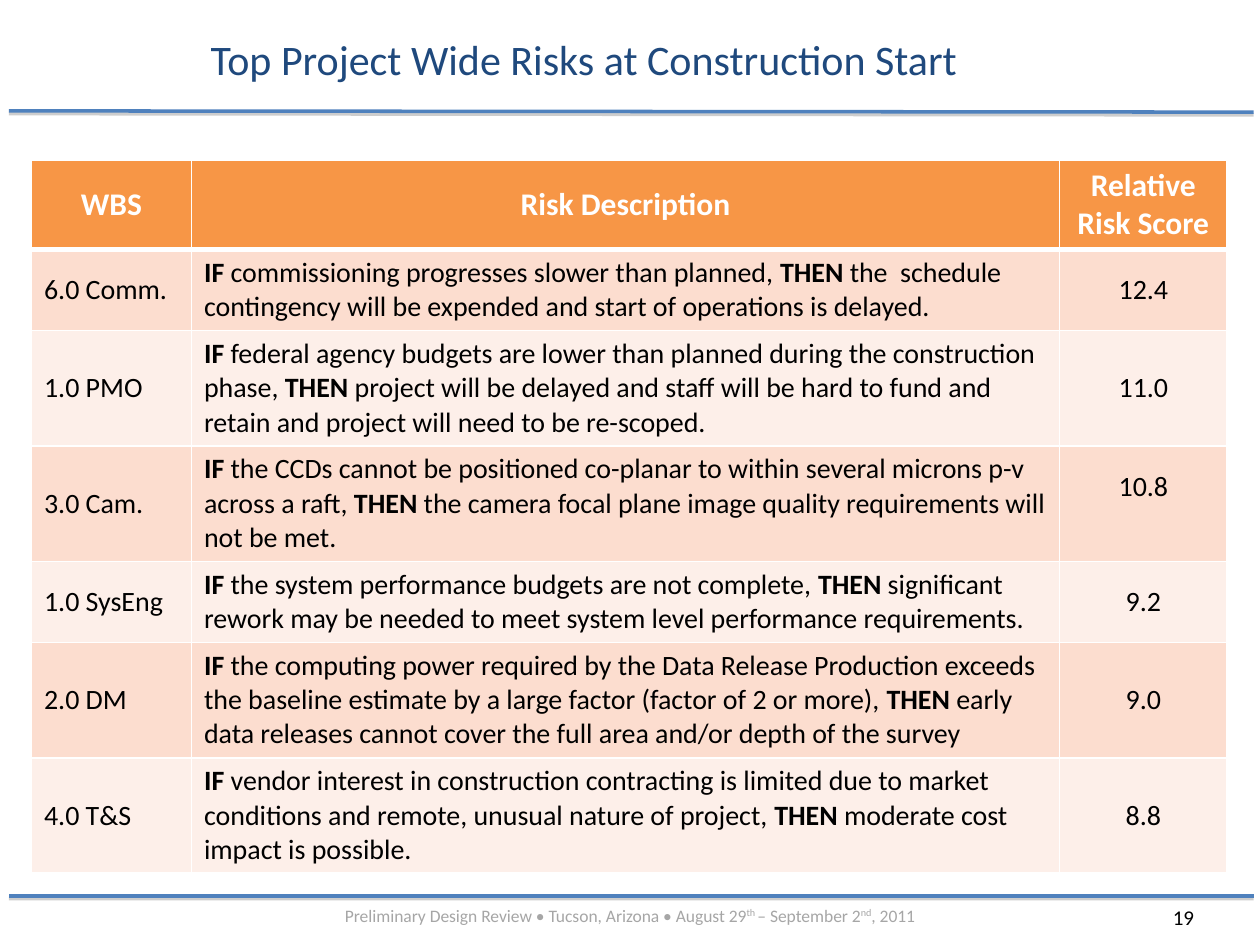
"""Build the slide listing the top project-wide risks at construction start."""
from lxml.etree import SubElement
from pptx import Presentation
from pptx.dml.color import RGBColor
from pptx.enum.shapes import MSO_CONNECTOR
from pptx.enum.text import MSO_ANCHOR as Anchor, MSO_AUTO_SIZE as AutoSize, PP_ALIGN as Align
from pptx.oxml import parse_xml
from pptx.oxml.ns import nsdecls, qn
from pptx.util import Inches, Pt

NAVY = RGBColor(0x1F, 0x49, 0x7D)
BLUE = RGBColor(0x4F, 0x81, 0xBD)
ORANGE = RGBColor(0xF7, 0x96, 0x46)
PEACH = RGBColor(0xFC, 0xDD, 0xCF)
PALE_PEACH = RGBColor(0xFD, 0xEF, 0xE9)
GRAY = RGBColor(0xA6, 0xA6, 0xA6)
BLACK = RGBColor(0, 0, 0)
WHITE = RGBColor(0xFF, 0xFF, 0xFF)

RULE_SHADOW = (
    f'<a:effectLst {nsdecls("a")}><a:outerShdw blurRad="0" dist="20320" dir="5400000" rotWithShape="0">'
    '<a:srgbClr val="808080"><a:alpha val="38000"/></a:srgbClr></a:outerShdw></a:effectLst>'
)
HEADINGS = ["WBS", "Risk Description", "Relative Risk Score"]
RISKS = [
    ("6.0 Comm.", "commissioning progresses slower than planned,",
     "the  schedule contingency will be expended and start of operations is delayed.", "12.4"),
    ("1.0 PMO", "federal agency budgets are lower than planned during the construction phase,",
     "project will be delayed and staff will be hard to fund and retain and project will need to be re-scoped.",
     "11.0"),
    ("3.0 Cam.", "the CCDs cannot be positioned co-planar to within several microns p-v across a raft,",
     "the camera focal plane image quality requirements will not be met.", "10.8"),
    ("1.0 SysEng", "the system performance budgets are not complete,",
     "significant rework may be needed to meet system level performance requirements.", "9.2"),
    ("2.0 DM", "the computing power required by the Data Release Production exceeds the baseline estimate "
     "by a large factor (factor of 2 or more),",
     "early data releases cannot cover the full area and/or depth of the survey", "9.0"),
    ("4.0 T&S", "vendor interest in construction contracting is limited due to market conditions and remote, "
     "unusual nature of project,",
     "moderate cost impact is possible.", "8.8"),
]


def write(frame, pieces, size, color, align=Align.LEFT, bold=()):
    para = frame.paragraphs[0]
    para.alignment = align
    for piece in pieces:
        span = para.add_run()
        span.text = piece
        span.font.name = "Calibri"
        span.font.size = Pt(size)
        span.font.color.rgb = color
        span.font.bold = piece in bold
    return para


deck = Presentation()
deck.slide_width, deck.slide_height = Inches(10), Inches(7.5)
page = deck.slides.add_slide(deck.slide_layouts[6])
col, row = deck.slide_width / 100, deck.slide_height / 75

for right_y, left_y in [(8.9, 8.8), (71.1, 71.1)]:
    rule = page.shapes.add_connector(
        MSO_CONNECTOR.STRAIGHT, int(99.5 * col), int(right_y * row), int(0.7 * col), int(left_y * row))
    rule.line.color.rgb = BLUE
    rule.line.width = Pt(2)
    rule._element.spPr.append(parse_xml(RULE_SHADOW))

texts = [
    (92.1, 71.3, 6.2, 3, ["19"], 12, BLACK, Align.LEFT, Anchor.TOP),
    (5, 71.3, 90, 2.7, ["Preliminary Design Review • Tucson, Arizona • August 29", "th ", "– September 2", "nd", ", 2011"],
     10, GRAY, Align.CENTER, Anchor.TOP),
    (12.5, 1.6, 67.7, 6.1, ["Top Project Wide Risks at Construction Start"], 24, NAVY, Align.CENTER, Anchor.MIDDLE),
]
for left, top, width, height, pieces, size, color, align, anchor in texts:
    box = page.shapes.add_textbox(int(left * col), int(top * row), int(width * col), int(height * row))
    box.text_frame.word_wrap = True
    box.text_frame.auto_size = AutoSize.NONE
    box.text_frame.vertical_anchor = anchor
    para = write(box.text_frame, pieces, size, color, align)
    for span in para.runs[1::2]:
        span.font._element.set("baseline", "30000")

table = page.shapes.add_table(
    len(RISKS) + 1, len(HEADINGS), int(2.5 * col), int(12.7 * row), int(95 * col), int(55.7 * row)).table
for column, width in zip(table.columns, [12.7, 68.9, 13.3]):
    column.width = int(width * col)
for line, height in zip(table.rows, [7, 6.4, 9.1, 9.1, 6.4, 9.1, 9.1]):
    line.height = int(height * row)

contents = [[[heading] for heading in HEADINGS]]
contents += [[[wbs], ["IF", f" {cause} ", "THEN", f" {effect}"], [score]] for wbs, cause, effect, score in RISKS]
for r, entries in enumerate(contents):
    header = r == 0
    for c, pieces in enumerate(entries):
        cell = table.cell(r, c)
        for side in ("L", "R", "T", "B"):
            heavy = (header and side == "B") or (r == 1 and side == "T")
            border = SubElement(cell._tc.get_or_add_tcPr(), qn(f"a:ln{side}"), w=str(Pt(3 if heavy else 1)))
            SubElement(SubElement(border, qn("a:solidFill")), qn("a:srgbClr"), val=str(WHITE))
        cell.fill.solid()
        cell.fill.fore_color.rgb = ORANGE if header else PEACH if r % 2 else PALE_PEACH
        cell.vertical_anchor = Anchor.TOP if c == 1 and not header else Anchor.MIDDLE
        write(cell.text_frame, pieces, 18 if header else 16, WHITE if header else BLACK,
              Align.CENTER if header or c == 2 else Align.LEFT, HEADINGS if header else ("IF", "THEN"))
table.cell(3, 2).margin_bottom = int(3.2 * row)

deck.save("out.pptx")
